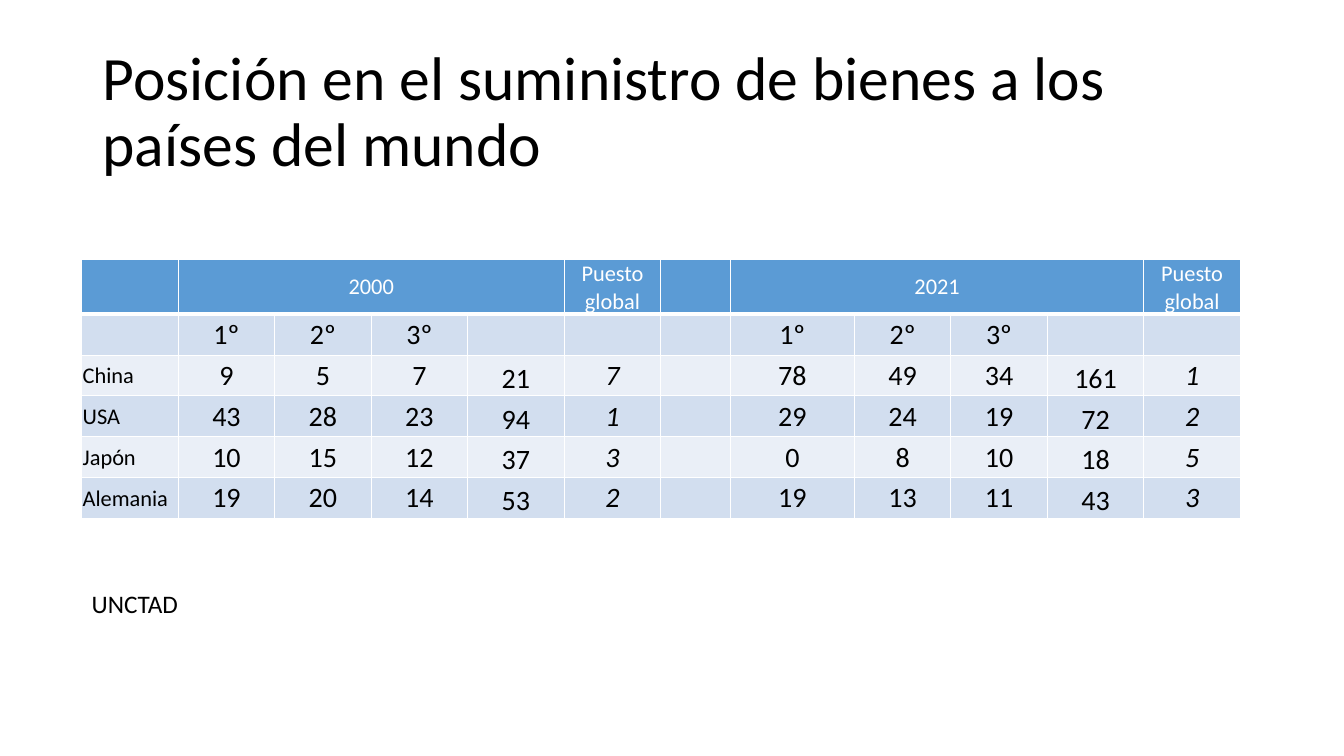
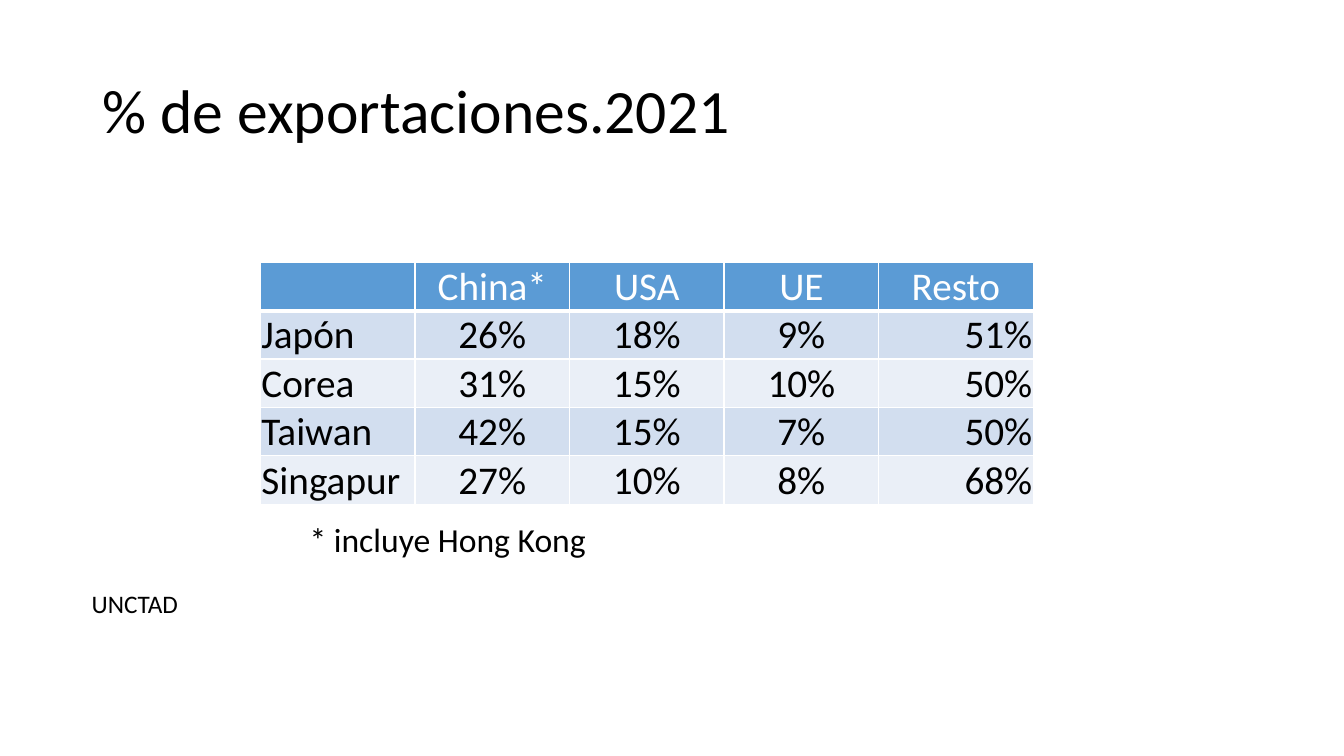
"""Build two slides of trade tables: supplier ranking and export shares."""
from dataclasses import dataclass

from lxml.etree import SubElement
from pptx import Presentation
from pptx.dml.color import RGBColor
from pptx.enum.text import MSO_ANCHOR, PP_ALIGN
from pptx.oxml.ns import qn
from pptx.util import Inches, Pt


@dataclass(frozen=True)
class Theme:
    font: str = "Calibri"
    ink: str = "000000"
    paper: str = "FFFFFF"
    header: str = "5B9BD5"
    bands: tuple = ("D2DEEF", "EAEFF7")
    title: int = 44
    export: int = 28
    note: int = 24
    rank: int = 20
    source: int = 18
    label: int = 16
    rule: int = 1
    header_rule: int = 3


theme = Theme()
deck = Presentation()
deck.slide_width, deck.slide_height = Inches(13.33), Inches(7.5)
across, down = deck.slide_width / 100, deck.slide_height / 100


def write(frame, text, size, color=theme.ink, align=PP_ALIGN.LEFT, italic=False):
    paragraph = frame.paragraphs[0]
    paragraph.alignment = align
    run = paragraph.add_run()
    run.text = text
    look = {"name": theme.font, "size": Pt(size), "bold": False, "italic": italic}
    for attribute, value in look.items():
        setattr(run.font, attribute, value)
    run.font.color.rgb = RGBColor.from_string(color)
    return paragraph


def rule_cell(cell, bottom):
    widths = {"a:lnL": theme.rule, "a:lnR": theme.rule, "a:lnT": theme.rule, "a:lnB": bottom}
    for edge, width in widths.items():
        line = SubElement(cell._tc.get_or_add_tcPr(), qn(edge), w=str(Pt(width)))
        SubElement(SubElement(line, qn("a:solidFill")), qn("a:srgbClr"), val=theme.paper)


column_kinds = {
    "name": (PP_ALIGN.LEFT, MSO_ANCHOR.MIDDLE, False),
    "low name": (PP_ALIGN.LEFT, MSO_ANCHOR.BOTTOM, False),
    "count": (PP_ALIGN.CENTER, MSO_ANCHOR.MIDDLE, False),
    "total": (PP_ALIGN.CENTER, MSO_ANCHOR.BOTTOM, False),
    "place": (PP_ALIGN.CENTER, MSO_ANCHOR.MIDDLE, True),
    "rest": (PP_ALIGN.RIGHT, MSO_ANCHOR.BOTTOM, False),
}
year_kinds = ["count"] * 3 + ["total", "place"]
year_heads = ["1º", "2º", "3º", "", ""]

pages = [
    {
        "title": "Posición en el suministro de bienes a los países del mundo",
        "corner": (6.08, 34.3),
        "widths": [7.18] * 6 + [5.18, 9.23] + [7.18] * 4,
        "heights": [7.28] + [5.4] * 5,
        "kinds": ["name", *year_kinds, "count", *year_kinds],
        "sizes": [theme.label] + [theme.rank] * 11,
        "header_size": theme.label,
        "header_anchor": MSO_ANCHOR.MIDDLE,
        "merges": [(1, 4), (7, 10)],
        "rows": [
            ["", "2000", "", "", "", "Puesto global", "", "2021", "", "", "", "Puesto global"],
            ["", *year_heads, "", *year_heads],
            ["China", "9", "5", "7", "21", "7", "", "78", "49", "34", "161", "1"],
            ["USA", "43", "28", "23", "94", "1", "", "29", "24", "19", "72", "2"],
            ["Japón", "10", "15", "12", "37", "3", "", "0", "8", "10", "18", "5"],
            ["Alemania", "19", "20", "14", "53", "2", "", "19", "13", "11", "43", "3"],
        ],
        "notes": [],
    },
    {
        "title": "% de exportaciones.2021",
        "corner": (19.38, 34.7),
        "widths": [11.5] * 5,
        "heights": [6.4] * 5,
        "kinds": ["low name", "count", "count", "count", "rest"],
        "sizes": [theme.export] * 5,
        "header_size": theme.export,
        "header_anchor": MSO_ANCHOR.BOTTOM,
        "merges": [],
        "rows": [
            ["", "China*", "USA", "UE", "Resto"],
            ["Japón", "26%", "18%", "9%", "51%"],
            ["Corea", "31%", "15%", "10%", "50%"],
            ["Taiwan", "42%", "15%", "7%", "50%"],
            ["Singapur", "27%", "10%", "8%", "68%"],
        ],
        "notes": [("* incluye Hong Kong", theme.note, (22.3, 68, 28.5, 6.7))],
    },
]
source = ("UNCTAD", theme.source, (6.08, 77.1, 9.4, 5.4))
title_area = (6.9, 5.33, 86.25, 19.33)
margins = {"margin_left": 0.01, "margin_right": 0.01, "margin_top": 0.01, "margin_bottom": 0}

for page in pages:
    slide = deck.slides.add_slide(deck.slide_layouts[6])

    texts = [(page["title"], theme.title, title_area), source, *page["notes"]]
    for text, size, (left, top, width, height) in texts:
        area = int(left * across), int(top * down), int(width * across), int(height * down)
        frame = slide.shapes.add_textbox(*area).text_frame
        frame.word_wrap = True
        paragraph = write(frame, text, size)
        if size == theme.title:
            frame.vertical_anchor = MSO_ANCHOR.MIDDLE
            paragraph.line_spacing = 0.9

    left, top = page["corner"]
    widths, heights, rows = page["widths"], page["heights"], page["rows"]
    table = slide.shapes.add_table(
        len(rows), len(widths), int(left * across), int(top * down),
        int(sum(widths) * across), int(sum(heights) * down),
    ).table
    for column, width in zip(table.columns, widths):
        column.width = int(width * across)
    for row, height in zip(table.rows, heights):
        row.height = int(height * down)
    for first, last in page["merges"]:
        table.cell(0, first).merge(table.cell(0, last))

    for r, values in enumerate(rows):
        for c, value in enumerate(values):
            align, anchor, italic = column_kinds[page["kinds"][c]]
            size, ink, fill, bottom = page["sizes"][c], theme.ink, theme.bands[(r - 1) % 2], theme.rule
            if r == 0:
                align, anchor, italic = PP_ALIGN.CENTER, page["header_anchor"], False
                size, ink, fill, bottom = page["header_size"], theme.paper, theme.header, theme.header_rule
            cell = table.cell(r, c)
            rule_cell(cell, bottom)
            cell.fill.solid()
            cell.fill.fore_color.rgb = RGBColor.from_string(fill)
            cell.vertical_anchor = anchor
            for margin, inches in margins.items():
                setattr(cell, margin, Inches(inches))
            if value:
                write(cell.text_frame, value, size, ink, align, italic)

deck.save("out.pptx")
